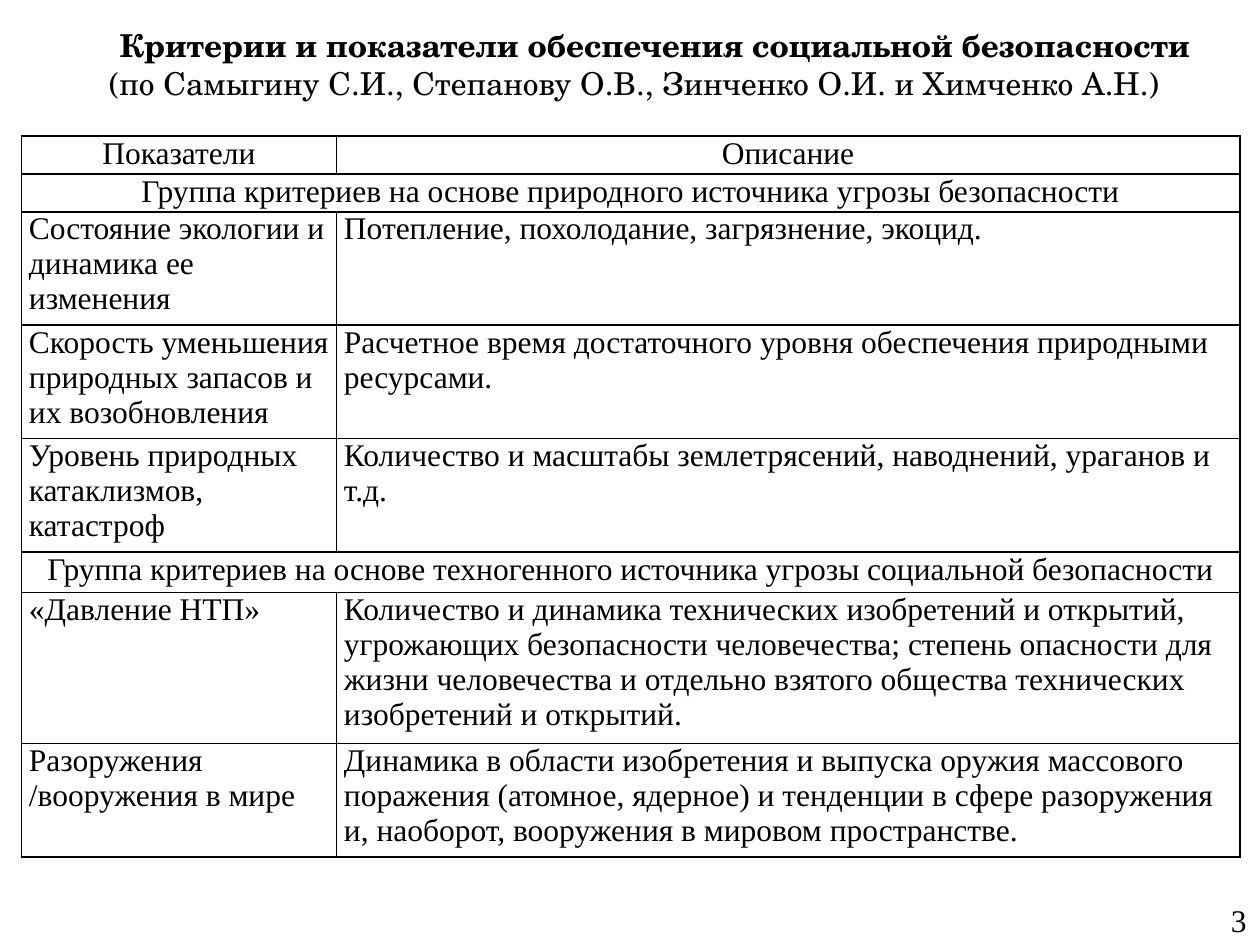
from lxml.etree import SubElement
from pptx import Presentation
from pptx.dml.color import RGBColor
from pptx.enum.text import MSO_ANCHOR, MSO_AUTO_SIZE, PP_ALIGN
from pptx.oxml.ns import qn
from pptx.util import Inches, Pt

BLACK = RGBColor(0, 0, 0)
TITLE_FONT = "TeX Gyre Schola"
BODY_FONT = "Times New Roman"
TEXT_SIZE = Pt(18)

HEADING = "Критерии и показатели обеспечения социальной безопасности"
AUTHORS = " (по Самыгину С.И., Степанову О.В., Зинченко О.И. и Химченко А.Н.)"
PAGE_NUMBER = "3"
COLUMN_WIDTHS = (2.5, 7.17)
HEADER = ("Показатели", "Описание")
CRITERIA = [
    (0.2, HEADER),
    (0.2, ("Группа критериев на основе природного источника угрозы безопасности",)),
    (0.61, ("Состояние экологии и динамика ее изменения",
            "Потепление, похолодание, загрязнение, экоцид.")),
    (0.81, ("Скорость уменьшения природных запасов и их возобновления",
            "Расчетное время достаточного уровня обеспечения природными ресурсами.")),
    (0.61, ("Уровень природных катаклизмов, катастроф",
            "Количество и масштабы землетрясений, наводнений, ураганов и т.д.")),
    (0.32, ("Группа критериев на основе техногенного источника угрозы "
            "социальной безопасности",)),
    (0.81, ("«Давление НТП»",
            "Количество и динамика технических изобретений и открытий, угрожающих "
            "безопасности человечества; степень опасности для жизни человечества и "
            "отдельно взятого общества технических изобретений и открытий.")),
    (0.81, ("Разоружения /вооружения в мире",
            "Динамика в области изобретения и выпуска оружия массового поражения "
            "(атомное, ядерное) и тенденции в сфере разоружения и, наоборот, "
            "вооружения в мировом пространстве.")),
]


def style_font(font, name, bold=False):
    font.name = name
    font.size = TEXT_SIZE
    font.bold = bold
    font.color.rgb = BLACK


def add_borders(cell):
    properties = cell._tc.get_or_add_tcPr()
    for position, side in enumerate(("lnL", "lnR", "lnT", "lnB")):
        line = SubElement(properties, qn(f"a:{side}"), w=str(Pt(1)))
        fill = SubElement(line, qn("a:solidFill"))
        SubElement(fill, qn("a:srgbClr"), val=str(BLACK))
        properties.insert(position, line)


def format_cell(cell, centred):
    cell.margin_left = cell.margin_right = Inches(0.06)
    cell.margin_top = cell.margin_bottom = 0
    cell.fill.background()
    add_borders(cell)
    paragraph = cell.text_frame.paragraphs[0]
    paragraph.alignment = PP_ALIGN.CENTER if centred else PP_ALIGN.LEFT
    style_font(paragraph.font, BODY_FONT)


def add_title(slide):
    title = slide.shapes.title
    title.left, title.top = 0, Inches(0.15)
    title.width, title.height = Inches(10), Inches(0.71)
    frame = title.text_frame
    frame.word_wrap = True
    frame.auto_size = MSO_AUTO_SIZE.SHAPE_TO_FIT_TEXT
    frame.vertical_anchor = MSO_ANCHOR.MIDDLE
    paragraph = frame.paragraphs[0]
    paragraph.alignment = PP_ALIGN.CENTER
    paragraph._p.get_or_add_pPr().set("indent", str(Inches(0.4)))
    heading = paragraph.add_run()
    heading.text = HEADING
    style_font(heading.font, TITLE_FONT, bold=True)
    paragraph.add_line_break()
    authors = paragraph.add_run()
    authors.text = AUTHORS
    style_font(authors.font, TITLE_FONT)


def add_criteria(slide):
    table_frame = slide.shapes.add_table(
        len(CRITERIA), len(COLUMN_WIDTHS), Inches(0.17), Inches(1.08),
        Inches(sum(COLUMN_WIDTHS)), Inches(6.02))
    table = table_frame.table
    table.first_row = table.horz_banding = False
    for column, width in zip(table.columns, COLUMN_WIDTHS):
        column.width = Inches(width)
    for index, (height, texts) in enumerate(CRITERIA):
        row = table.rows[index]
        row.height = Inches(height)
        is_group = len(texts) == 1
        for cell, text in zip(row.cells, texts):
            cell.text = text
        for cell in row.cells:
            format_cell(cell, is_group or texts is HEADER)
        if is_group:
            table.cell(index, 0).merge(table.cell(index, 1))
    table_frame.height = Inches(6.02)


def add_page_number(slide):
    box = slide.shapes.add_textbox(Inches(9.67), Inches(7.1), Inches(0.33), Inches(0.4))
    frame = box.text_frame
    frame.word_wrap = False
    frame.auto_size = MSO_AUTO_SIZE.SHAPE_TO_FIT_TEXT
    frame.text = PAGE_NUMBER
    style_font(frame.paragraphs[0].font, BODY_FONT)


def main():
    deck = Presentation()
    deck.slide_width, deck.slide_height = Inches(10), Inches(7.5)
    slide = deck.slides.add_slide(deck.slide_layouts.get_by_name("Title Only"))
    add_title(slide)
    add_criteria(slide)
    add_page_number(slide)
    deck.save("out.pptx")


if __name__ == "__main__":
    main()
